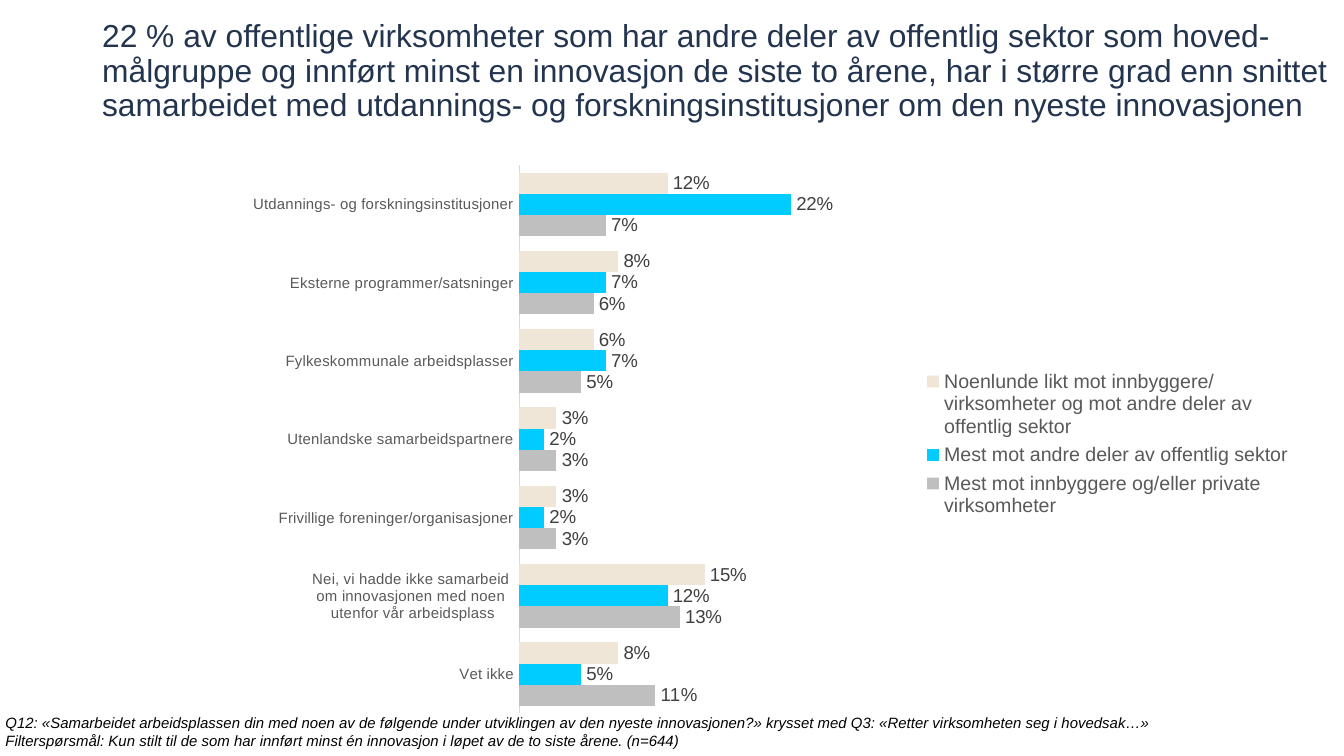
from lxml import etree
from pptx import Presentation
from pptx.chart.data import CategoryChartData
from pptx.dml.color import RGBColor
from pptx.enum.chart import (XL_CHART_TYPE, XL_LABEL_POSITION,
                             XL_LEGEND_POSITION, XL_TICK_MARK)
from pptx.enum.text import MSO_ANCHOR
from pptx.oxml import parse_xml
from pptx.oxml.ns import nsdecls, qn
from pptx.util import Inches, Pt

NAVY = RGBColor(0x23, 0x34, 0x4F)
BLACK = RGBColor(0, 0, 0)
DARK = RGBColor(0x40, 0x40, 0x40)
GREY = RGBColor(0x59, 0x59, 0x59)
PALE = RGBColor(0xD9, 0xD9, 0xD9)
SILVER = RGBColor(0xBF, 0xBF, 0xBF)
CYAN = RGBColor(0x00, 0xCC, 0xFF)
SAND = RGBColor(0xF0, 0xE6, 0xD8)
FONT = "Arial"

TITLE = ["22 % av offentlige virksomheter som har andre deler av offentlig "
         "sektor som hoved-målgruppe og innført minst en innovasjon de siste "
         "to årene, har i større grad enn snittet samarbeidet med utdannings- "
         "og forskningsinstitusjoner om den nyeste innovasjonen"]
NOTES = ["Q12: «Samarbeidet arbeidsplassen din med noen av de følgende under "
         "utviklingen av den nyeste innovasjonen?» krysset med Q3: «Retter "
         "virksomheten seg i hovedsak…»",
         "Filterspørsmål: Kun stilt til de som har innført minst én innovasjon "
         "i løpet av de to siste årene. (n=644)"]
GROUPS = [
    ("Mest mot innbyggere og/eller private virksomheter", SILVER),
    ("Mest mot andre deler av offentlig sektor", CYAN),
    ("Noenlunde likt mot innbyggere/virksomheter og mot andre deler av "
     "offentlig sektor", SAND),
]
# Partner, then the percentage for each group; bottom row first
ROWS = [
    ("Vet ikke", 11, 5, 8),
    ("Nei, vi hadde ikke samarbeid \nom innovasjonen med noen \n"
     "utenfor vår arbeidsplass", 13, 12, 15),
    ("Frivillige foreninger/organisasjoner", 3, 2, 3),
    ("Utenlandske samarbeidspartnere", 3, 2, 3),
    ("Fylkeskommunale arbeidsplasser", 5, 7, 6),
    ("Eksterne programmer/satsninger", 6, 7, 8),
    ("Utdannings- og forskningsinstitusjoner", 7, 22, 12),
]
PLOT = (0.285, 0.034, 0.68, 0.927)
KEY = (0.7, 0.37, 0.29, 0.27)


def style(font, size, color, italic=False):
    font.name, font.size, font.italic = FONT, Pt(size), italic
    font.color.rgb = color


def add_text(slide, lines, box, size, color, italic=False, spacing=None,
             anchor=MSO_ANCHOR.TOP):
    frame = slide.shapes.add_textbox(*map(Inches, box)).text_frame
    frame.word_wrap = True
    frame.vertical_anchor = anchor
    frame.margin_left = frame.margin_right = 0
    frame.margin_top = frame.margin_bottom = 0
    for i, line in enumerate(lines):
        para = frame.add_paragraph() if i else frame.paragraphs[0]
        run = para.add_run()
        run.text = line
        para.line_spacing = spacing
        style(run.font, size, color, italic)


def make_layout(box, inner=False):
    """Return a manual layout element, in shares of the chart's size."""
    root = parse_xml(f"<c:layout {nsdecls('c')}><c:manualLayout/></c:layout>")
    items = [("layoutTarget", "inner")] if inner else []
    items += [("xMode", "edge"), ("yMode", "edge"), *zip("xywh", box)]
    for tag, val in items:
        etree.SubElement(root[0], qn(f"c:{tag}")).set("val", str(val))
    return root


def add_bars(slide, box):
    data = CategoryChartData(number_format="0%")
    data.categories = [row[0] for row in ROWS]
    for i, (name, _) in enumerate(GROUPS, 1):
        data.add_series(name, [row[i] / 100 for row in ROWS])
    chart = slide.shapes.add_chart(
        XL_CHART_TYPE.BAR_CLUSTERED, *map(Inches, box), data).chart
    style(chart.font, 10, BLACK)
    chart.has_title = False

    plot = chart.plots[0]
    plot.gap_width, plot.overlap = 70, 0
    plot.vary_by_categories = False
    for bars, (_, color) in zip(plot.series, GROUPS):
        bars.format.fill.solid()
        bars.format.fill.fore_color.rgb = color
        labels = bars.data_labels
        labels.show_value = True
        labels.position = XL_LABEL_POSITION.OUTSIDE_END
        labels.number_format = "0%"
        labels.number_format_is_linked = False
        style(labels.font, 10, DARK)

    cats, vals = chart.category_axis, chart.value_axis
    cats.major_tick_mark = cats.minor_tick_mark = XL_TICK_MARK.NONE
    cats.format.line.color.rgb = PALE
    cats.format.line.width = Pt(0.75)
    style(cats.tick_labels.font, 8, GREY)
    vals.minimum_scale, vals.maximum_scale = -0.1, 0.6
    vals.has_major_gridlines = False
    vals.visible = False

    chart.has_legend = True
    legend = chart.legend
    legend.position = XL_LEGEND_POSITION.RIGHT
    legend.include_in_layout = False
    style(legend.font, 10.5, GREY)

    area = chart._chartSpace.chart.plotArea
    for old in area.findall(qn("c:layout")):
        area.remove(old)
    area.insert(0, make_layout(PLOT, inner=True))
    key = legend._element
    for old in key.findall(qn("c:layout")):
        key.remove(old)
    key.find(qn("c:legendPos")).addnext(make_layout(KEY))


def main():
    deck = Presentation()
    deck.slide_width = Inches(10)
    deck.slide_height = deck.slide_width * 9 // 16
    slide = deck.slides.add_slide(deck.slide_layouts[6])
    add_text(slide, TITLE, (0.76, 0.37, 9.15, 0.33), 17, NAVY,
             spacing=0.9, anchor=MSO_ANCHOR.MIDDLE)
    add_bars(slide, (0.25, 1.08, 9.46, 4.4))
    add_text(slide, NOTES, (0.04, 5.31, 9.88, 0.27), 8, BLACK, italic=True)
    deck.save("out.pptx")


if __name__ == "__main__":
    main()
